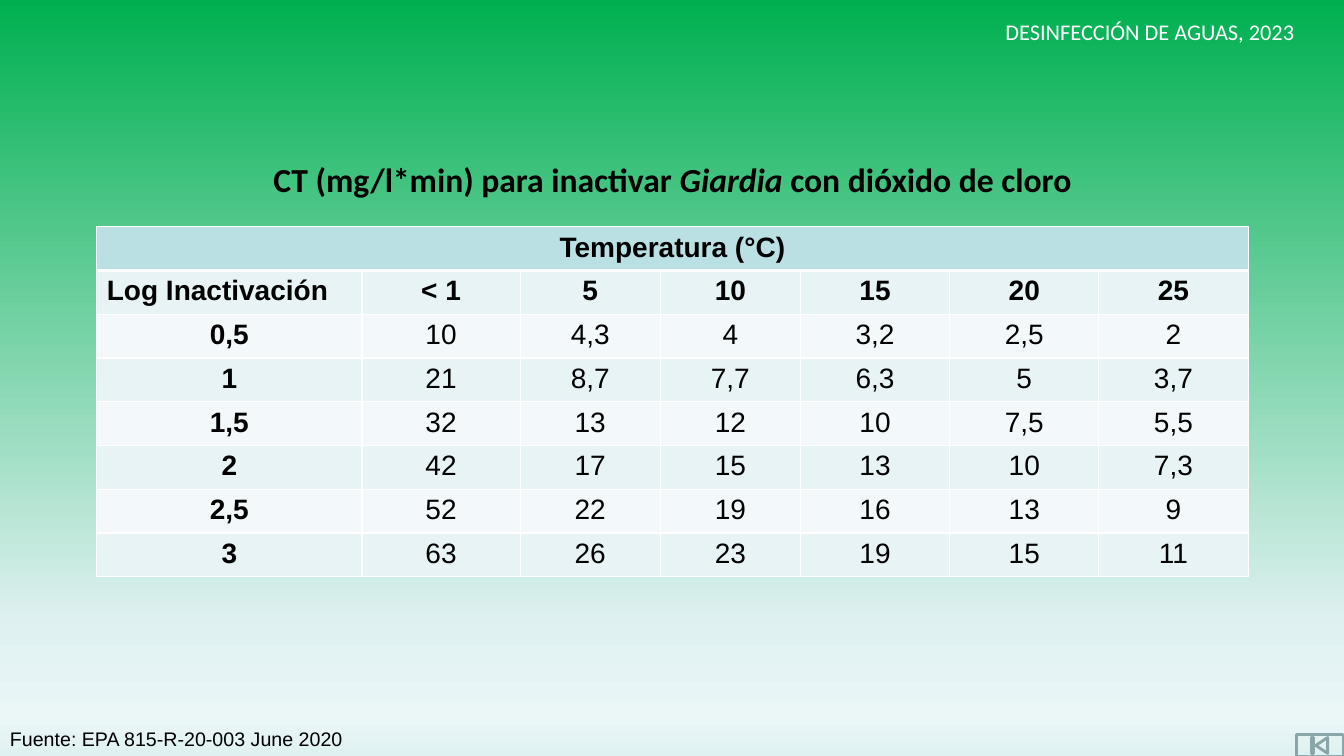
from lxml import etree
from pptx import Presentation
from pptx.dml.color import RGBColor
from pptx.enum.shapes import MSO_SHAPE
from pptx.enum.text import MSO_AUTO_SIZE, PP_ALIGN
from pptx.oxml.ns import qn
from pptx.util import Inches, Pt

LEFT, CENTER = PP_ALIGN.LEFT, PP_ALIGN.CENTER
GROW = MSO_AUTO_SIZE.SHAPE_TO_FIT_TEXT
BUTTON = MSO_SHAPE.ACTION_BUTTON_BEGINNING

BLACK = RGBColor(0x00, 0x00, 0x00)
WHITE = RGBColor(0xFF, 0xFF, 0xFF)
GREEN = RGBColor(0x00, 0xB0, 0x50)
MIST = RGBColor(0xE0, 0xF1, 0xF2)
PALE = RGBColor(0xEB, 0xF6, 0xF7)
GREY = RGBColor(0x8A, 0xA6, 0xA8)
HEAD = RGBColor(0xBB, 0xE0, 0xE3)
BANDS = (RGBColor(0xE7, 0xF3, 0xF4), RGBColor(0xF3, 0xF9, 0xFA))

WIDTH, HEIGHT = 13.33, 7.5
MARGIN = 0.96
TABLE_TOP, TABLE_HEIGHT = 2.25, 3.47
COLUMNS = (2.63, 1.57, 1.39, 1.39, 1.48, 1.48, 1.48)
GRADIENT = ((0, GREEN), (83, MIST), (95, PALE), (100, MIST))

COURSE = "DESINFECCIÓN DE AGUAS, 2023"
TITLE = (("CT (mg/l*min) para inactivar ", False), ("Giardia", True),
         (" con dióxido de cloro", False))
SOURCE = "Fuente: EPA 815-R-20-003 June 2020"
ROWS = (
    ("Temperatura (°C)",),
    ("Log Inactivación", "< 1", "5", "10", "15", "20", "25"),
    ("0,5", "10", "4,3", "4", "3,2", "2,5", "2"),
    ("1", "21", "8,7", "7,7", "6,3", "5", "3,7"),
    ("1,5", "32", "13", "12", "10", "7,5", "5,5"),
    ("2", "42", "17", "15", "13", "10", "7,3"),
    ("2,5", "52", "22", "19", "16", "13", "9"),
    ("3", "63", "26", "23", "19", "15", "11"),
)


def add_run(p, text, color=BLACK, **formats):
    r = p.add_run()
    r.text = text
    r.font.color.rgb = color
    for name, value in formats.items():
        setattr(r.font, name, value)


def add_text(slide, box, runs, align, **formats):
    tf = slide.shapes.add_textbox(*map(Inches, box)).text_frame
    tf.word_wrap = True
    tf.auto_size = GROW
    p = tf.paragraphs[0]
    p.alignment = align
    for text, italic in runs:
        add_run(p, text, italic=italic, **formats)


def add_color(parent, color):
    etree.SubElement(parent, qn("a:srgbClr"), val=str(color))


def paint_background(slide):
    fill = slide.background.fill
    fill.gradient()
    fill.gradient_angle = 270
    stops = next(slide.element.iter(qn("a:gsLst")))
    for stop in list(stops):
        stops.remove(stop)
    for share, color in GRADIENT:
        add_color(etree.SubElement(stops, qn("a:gs"), pos=str(share * 1000)), color)


def add_borders(cell, widths):
    tcPr = cell._tc.get_or_add_tcPr()
    for side, width in zip("LRTB", widths):
        ln = etree.SubElement(tcPr, qn(f"a:ln{side}"), w=str(Pt(width)))
        add_color(etree.SubElement(ln, qn("a:solidFill")), WHITE)


def add_ct_table(slide):
    box = (MARGIN, TABLE_TOP, sum(COLUMNS), TABLE_HEIGHT)
    table = slide.shapes.add_table(len(ROWS), len(COLUMNS), *map(Inches, box)).table
    table.first_row = table.horz_banding = False
    for column, width in zip(table.columns, COLUMNS):
        column.width = Inches(width)
    for i, row in enumerate(ROWS):
        table.rows[i].height = Inches(TABLE_HEIGHT / len(ROWS))
        for j in range(len(COLUMNS)):
            cell = table.cell(i, j)
            add_borders(cell, (1, 1, 3 if i == 1 else 1, 3 if i == 0 else 1))
            cell.fill.solid()
            cell.fill.fore_color.rgb = BANDS[(i - 1) % 2] if i else HEAD
            if j < len(row):
                p = cell.text_frame.paragraphs[0]
                p.alignment = LEFT if (i, j) == (1, 0) else CENTER
                add_run(p, row[j], name="Arial", size=Pt(20), bold=i < 2 or j == 0)
    table.cell(0, 0).merge(table.cell(0, len(COLUMNS) - 1))


def add_button(slide):
    sp = slide.shapes.add_shape(BUTTON, *map(Inches, (12.86, 7.29, 0.46, 0.21)))
    sp.shadow.inherit = False
    sp.fill.background()
    sp.line.color.rgb = GREY
    sp.line.width = Pt(2)


def main():
    prs = Presentation()
    prs.slide_width, prs.slide_height = Inches(WIDTH), Inches(HEIGHT)
    slide = prs.slides.add_slide(prs.slide_layouts[6])
    paint_background(slide)
    add_button(slide)
    add_text(slide, (9.82, 0.13, 3.17, 0.37), ((COURSE, False),), CENTER,
             color=WHITE, name="Calibri", size=Pt(16))
    add_ct_table(slide)
    add_text(slide, (MARGIN, 1.53, sum(COLUMNS), 0.5), TITLE, CENTER,
             name="Calibri", size=Pt(24), bold=True)
    add_text(slide, (0, HEIGHT - 0.34, WIDTH / 2, 0.34), ((SOURCE, False),), LEFT,
             name="Arial", size=Pt(14))
    prs.save("out.pptx")


if __name__ == "__main__":
    main()
